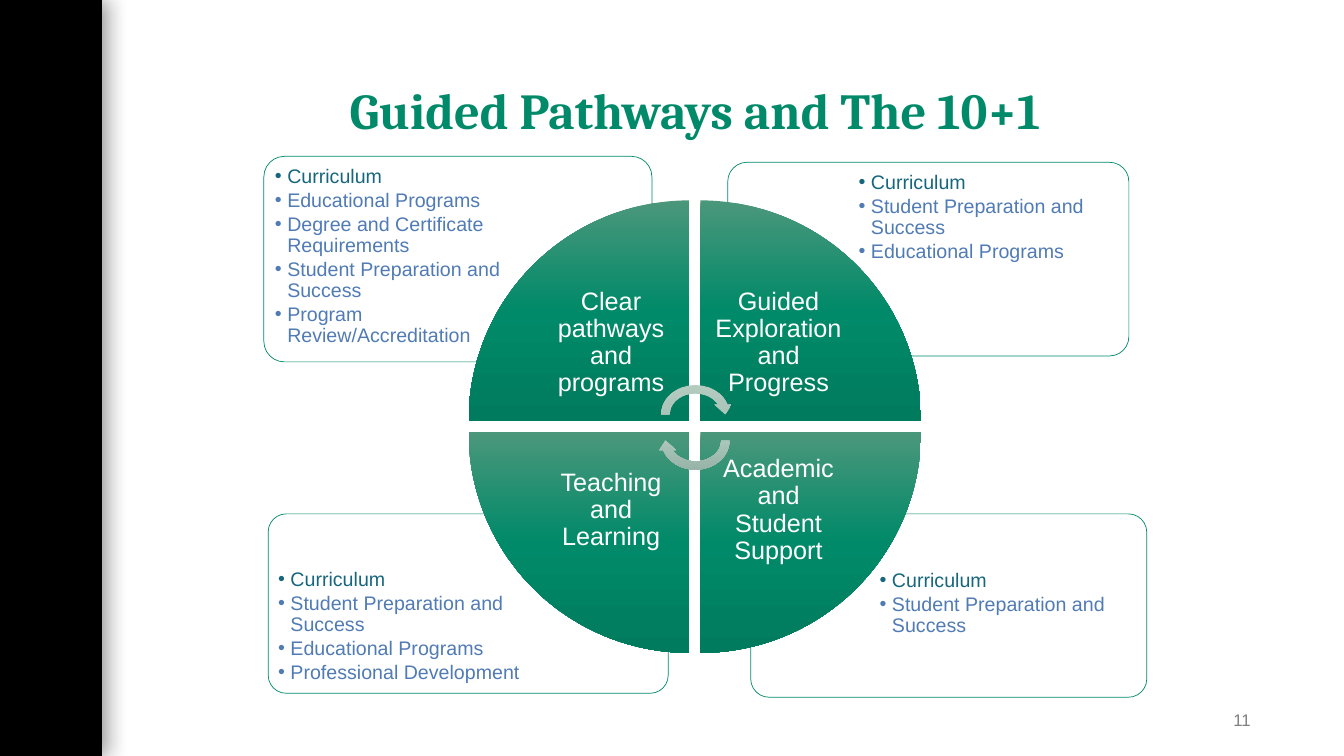
from lxml.etree import SubElement
from pptx import Presentation
from pptx.dml.color import RGBColor
from pptx.enum.shapes import MSO_SHAPE as Preset
from pptx.enum.text import MSO_ANCHOR as Anchor, PP_ALIGN as Align
from pptx.oxml.ns import qn
from pptx.util import Cm, Pt

BLACK = RGBColor(0x00, 0x00, 0x00)
WHITE = RGBColor(0xFF, 0xFF, 0xFF)
GREEN = RGBColor(0x00, 0x8A, 0x69)
TEAL = RGBColor(0x17, 0x66, 0x7E)
BLUE = RGBColor(0x50, 0x7B, 0xB5)
GREY = RGBColor(0x7F, 0x7F, 0x7F)
WEDGE_SHADES = (RGBColor(0x4B, 0x97, 0x7B), GREEN, RGBColor(0x00, 0x7B, 0x5D))
ARROW_SHADES = (RGBColor(0xB5, 0xCB, 0xC1), RGBColor(0xAA, 0xC5, 0xB9), RGBColor(0x95, 0xB1, 0xA5))

TITLE = {"name": "Cambria", "size": Pt(36), "bold": True}
LABEL = {"name": "Arial", "size": Pt(18)}
BULLET = {"name": "Arial", "size": Pt(14)}
NUMBER = {"name": "Arial", "size": Pt(12)}

PREPARATION = "Student Preparation and Success"
PROGRAMS = "Educational Programs"
CARDS = [
    ((18.92, 12.95, 9.98, 4.62), (22.02, 14.22, 6.78, 3.28), ["Curriculum", PREPARATION]),
    ((6.76, 12.95, 10.08, 4.52), (6.86, 14.2, 6.86, 3.18),
     ["Curriculum", PREPARATION, PROGRAMS, "Professional Development"]),
    ((18.34, 4.09, 10.11, 4.88), (21.49, 4.19, 6.86, 3.45), ["Curriculum", PREPARATION, PROGRAMS]),
    ((6.65, 3.94, 9.78, 5.18), (6.78, 4.04, 6.63, 3.66),
     ["Curriculum", PROGRAMS, "Degree and Certificate Requirements", PREPARATION,
      "Program Review/Accreditation"]),
]
WEDGES = [
    (0, 0, "Clear pathways and programs"),
    (1, 0, "Guided Exploration and Progress"),
    (1, 1, "Academic and Student Support"),
    (0, 1, "Teaching and Learning"),
]
WHEEL_LEFT, WHEEL_TOP = 11.81, 5.05
WEDGE_SIZE, WEDGE_STEP, LABEL_SIZE = 5.56, 5.84, 3.94


def apply(target, values):
    """Set each attribute of the target from a dict."""
    for name, value in values.items():
        setattr(target, name, value)


class SlideBuilder:
    """Draws the elements of one slide in a shared style."""

    def __init__(self, page):
        """Keep the slide and the paragraph style."""
        self.page = page
        self.spacing = {"line_spacing": 0.9, "space_before": Pt(0)}

    def shape(self, preset, place, rotation=0):
        """Add a plain preset shape without line or shadow."""
        shape = self.page.shapes.add_shape(preset, *map(Cm, place))
        shape.shadow.inherit = False
        shape.line.fill.background()
        shape.rotation = rotation
        return shape

    def bar(self, place):
        """Add the black side bar with its soft shadow."""
        bar = self.shape(Preset.RECTANGLE, place)
        bar.fill.solid()
        bar.fill.fore_color.rgb = BLACK
        effects = bar._element.spPr.find(qn("a:effectLst"))
        shadow = SubElement(effects, qn("a:outerShdw"), blurRad=str(Pt(15)), dist=str(Pt(3)),
                            dir="0", algn="l", rotWithShape="0")
        color = SubElement(shadow, qn("a:srgbClr"), val=str(BLACK))
        SubElement(color, qn("a:alpha"), val="40000")

    def card(self, place):
        """Add a rounded, nearly opaque white card."""
        card = self.shape(Preset.ROUNDED_RECTANGLE, place)
        card.adjustments[0] = 0.1
        card.fill.solid()
        card.fill.fore_color.rgb = WHITE
        color = card._element.spPr.find(qn("a:solidFill")).find(qn("a:srgbClr"))
        SubElement(color, qn("a:alpha"), val="90000")
        card.line.color.rgb = GREEN
        card.line.width = Pt(0.5)

    def shaded(self, preset, place, rotation, shades):
        """Add a shape whose shading runs down the page at any rotation."""
        shape = self.shape(preset, place, rotation)
        shape.fill.gradient()
        gradient = shape._element.spPr.find(qn("a:gradFill"))
        gradient.set("rotWithShape", "0")
        for child in list(gradient):
            gradient.remove(child)
        stops = SubElement(gradient, qn("a:gsLst"))
        for index, shade in enumerate(shades):
            stop = SubElement(stops, qn("a:gs"), pos=str(index * 50000))
            SubElement(stop, qn("a:srgbClr"), val=str(shade))
        SubElement(gradient, qn("a:lin"), ang="5400000", scaled="0")

    def text(self, place, lines, font, align=Align.LEFT, anchor=Anchor.MIDDLE,
             inset=0.25, right_inset=None, bullets=False):
        """Add a text box holding (text, colour) lines."""
        box = self.page.shapes.add_textbox(*map(Cm, place))
        frame = box.text_frame
        side = inset if right_inset is None else right_inset
        upright = min(inset, 0.13) if font in (TITLE, NUMBER) else inset
        apply(frame, {"word_wrap": True, "vertical_anchor": anchor,
                      "margin_left": Cm(inset), "margin_right": Cm(side),
                      "margin_top": Cm(upright), "margin_bottom": Cm(upright)})
        for index, (words, color) in enumerate(lines):
            para = frame.add_paragraph() if index else frame.paragraphs[0]
            if bullets:
                layout = para._p.get_or_add_pPr()
                layout.set("marL", str(Cm(0.31)))
                layout.set("indent", str(-Cm(0.31)))
                SubElement(layout, qn("a:buFont"), typeface="Arial")
                SubElement(layout, qn("a:buChar"), char="•")
                para.space_after = Pt(2)
            apply(para, {**self.spacing, "alignment": align})
            span = para.add_run()
            span.text = words
            apply(span.font, font)
            span.font.color.rgb = color


def main():
    """Build the slide and save it."""
    deck = Presentation()
    apply(deck, {"slide_width": Cm(33.87), "slide_height": Cm(19.05)})
    builder = SlideBuilder(deck.slides.add_slide(deck.slide_layouts[6]))

    builder.bar((0, 0, 2.57, 19.05))
    builder.text((3.56, 1.02, 27.91, 3.68), [("Guided Pathways and The 10+1", GREEN)],
                 TITLE, Align.CENTER)
    builder.text((28.98, 17.65, 2.54, 1.02), [("11", GREY)], NUMBER, Align.RIGHT, right_inset=0)

    for card_place, text_place, topics in CARDS:
        builder.card(card_place)
        lines = [(topic, BLUE if index else TEAL) for index, topic in enumerate(topics)]
        builder.text(text_place, lines, BULLET, anchor=Anchor.TOP, inset=0.15, bullets=True)

    inner = WEDGE_SIZE - LABEL_SIZE
    for turn, (column, row, label) in enumerate(WEDGES):
        left = WHEEL_LEFT + column * WEDGE_STEP
        top = WHEEL_TOP + row * WEDGE_STEP
        builder.shaded(Preset.PIE_WEDGE, (left, top, WEDGE_SIZE, WEDGE_SIZE),
                       turn * 90, WEDGE_SHADES)
        label_place = (left + inner * (1 - column), top + inner * (1 - row), LABEL_SIZE, LABEL_SIZE)
        builder.text(label_place, [(label, WHITE)], LABEL, Align.CENTER, inset=0.35)

    for top, rotation in ((9.6, 0), (10.26, 180)):
        builder.shaded(Preset.CIRCULAR_ARROW, (16.56, top, 1.93, 1.68), rotation, ARROW_SHADES)

    deck.save("out.pptx")


if __name__ == "__main__":
    main()
